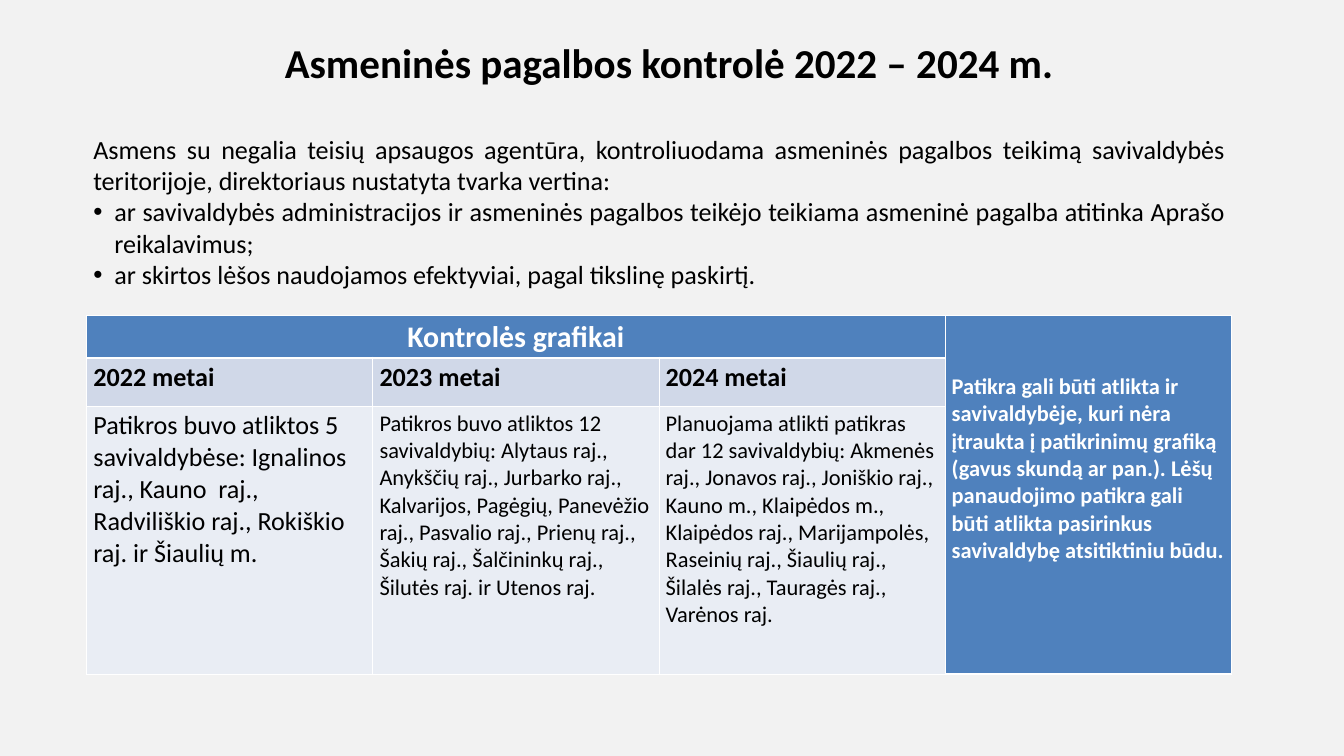
from dataclasses import dataclass

import pptx
import pptx.dml.color
import pptx.enum.text
import pptx.oxml
import pptx.oxml.ns
import pptx.util

Pt = pptx.util.Pt
ALIGN = pptx.enum.text.PP_ALIGN
ANCHOR = pptx.enum.text.MSO_ANCHOR
FONT = "Calibri"
COLORS = {"page": "F2F2F2", "black": "000000", "white": "FFFFFF",
          "blue": "4F81BD", "band": "D0D8E8", "pale": "E9EDF4"}
LEFT, WIDTH = 92.9, 1226.2
INDENT = 22.5
ROWS = (45, 52, 287)


@dataclass
class Entry:
    """Text of one table cell; rows and cols give its span."""
    row: int
    col: int
    text: str
    size: float
    ink: str = "black"
    bold: bool = False
    align: ALIGN = ALIGN.LEFT
    rows: int = 1
    cols: int = 1
    top: float = 3.6


ENTRIES = [
    Entry(0, 0, "Kontrolės grafikai", 32, "white", True, ALIGN.CENTER, cols=3),
    Entry(0, 3, "Patikra gali būti atlikta ir savivaldybėje, kuri nėra įtraukta "
          "į patikrinimų grafiką (gavus skundą ar pan.). Lėšų panaudojimo patikra "
          "gali būti atlikta pasirinkus savivaldybę atsitiktiniu būdu.",
          24, "white", True, rows=3, top=62),
    *(Entry(1, col, f"{2022 + col} metai", 28, bold=True) for col in range(3)),
    Entry(2, 0, "Patikros buvo atliktos 5 savivaldybėse: Ignalinos raj., "
          "Kauno  raj., Radviliškio raj., Rokiškio raj. ir Šiaulių m.", 28),
    Entry(2, 1, "Patikros buvo atliktos 12 savivaldybių: Alytaus raj., "
          "Anykščių raj., Jurbarko raj., Kalvarijos, Pagėgių, Panevėžio raj., "
          "Pasvalio raj., Prienų raj., Šakių raj., Šalčininkų raj., "
          "Šilutės raj. ir Utenos raj.", 24),
    Entry(2, 2, "Planuojama atlikti patikras dar 12 savivaldybių: Akmenės raj., "
          "Jonavos raj., Joniškio raj., Kauno m., Klaipėdos m., Klaipėdos raj., "
          "Marijampolės, Raseinių raj., Šiaulių raj., Šilalės raj., "
          "Tauragės raj., Varėnos raj.", 24),
]
INTRO = ("Asmens su negalia teisių apsaugos agentūra, kontroliuodama asmeninės "
         "pagalbos teikimą savivaldybės teritorijoje, direktoriaus nustatyta "
         "tvarka vertina:")
POINTS = [
    "ar savivaldybės administracijos ir asmeninės pagalbos teikėjo teikiama "
    "asmeninė pagalba atitinka Aprašo reikalavimus;",
    "ar skirtos lėšos naudojamos efektyviai, pagal tikslinę paskirtį.",
]


def shade(name: str) -> pptx.dml.color.RGBColor:
    return pptx.dml.color.RGBColor.from_string(COLORS[name])


def paint(fill, name: str) -> None:
    fill.solid()
    fill.fore_color.rgb = shade(name)


def write(para, text: str, *, size: float, ink: str = "black", bold: bool = False,
          align: ALIGN = ALIGN.LEFT, bullet: bool = False) -> None:
    para.alignment = align
    run = para.add_run()
    run.text = text
    run.font.name, run.font.size, run.font.bold = FONT, Pt(size), bold
    run.font.color.rgb = shade(ink)
    if bullet:
        props = para._p.get_or_add_pPr()
        props.set("marL", str(Pt(INDENT)))
        props.set("indent", str(-Pt(INDENT)))
        for tag, key, value in (("buFont", "typeface", "Arial"), ("buChar", "char", "•")):
            mark = pptx.oxml.parse_xml(
                f'<a:{tag} {pptx.oxml.ns.nsdecls("a")} {key}="{value}"/>')
            props.append(mark)


def add_box(slide, left: float, top: float, width: float, height: float):
    box = slide.shapes.add_textbox(Pt(left), Pt(top), Pt(width), Pt(height))
    box.text_frame.word_wrap = True
    return box.text_frame


def edge(cell, base: float) -> None:
    """Draw white cell borders: 1 pt, with the bottom one base points wide."""
    props = cell._tc.get_or_add_tcPr()
    for side, width in zip("LRTB", (1, 1, 1, base)):
        props.append(pptx.oxml.parse_xml(
            f'<a:ln{side} {pptx.oxml.ns.nsdecls("a")} w="{Pt(width)}"><a:solidFill>'
            f'<a:srgbClr val="{COLORS["white"]}"/></a:solidFill></a:ln{side}>'))


def add_grid(slide) -> None:
    grid = slide.shapes.add_table(len(ROWS), 4, Pt(LEFT), Pt(337.8),
                                  Pt(WIDTH), Pt(sum(ROWS))).table
    for row, height in enumerate(ROWS):
        grid.rows[row].height = Pt(height)
        for col in range(4):
            cell = grid.cell(row, col)
            head = row == 0 or col == 3
            edge(cell, 3 if head else 1)
            paint(cell.fill, "blue" if head else ("band", "pale")[row - 1])
    for item in ENTRIES:
        cell = grid.cell(item.row, item.col)
        if item.rows * item.cols > 1:
            cell.merge(grid.cell(item.row + item.rows - 1, item.col + item.cols - 1))
        cell.margin_top = Pt(item.top)
        write(cell.text_frame.paragraphs[0], item.text, size=item.size,
              ink=item.ink, bold=item.bold, align=item.align)


def main() -> None:
    deck = pptx.Presentation()
    deck.slide_width, deck.slide_height = Pt(1440), Pt(810)
    slide = deck.slides.add_slide(deck.slide_layouts[6])
    paint(slide.background.fill, "page")

    title = add_box(slide, 36, 21.6, 1363, 90)
    title.vertical_anchor = ANCHOR.MIDDLE
    write(title.paragraphs[0], "Asmeninės pagalbos kontrolė 2022 – 2024 m.",
          size=44, bold=True, align=ALIGN.CENTER)

    body = add_box(slide, LEFT, 139, WIDTH, 198.7)
    write(body.paragraphs[0], INTRO, size=28, align=ALIGN.JUSTIFY)
    for point in POINTS:
        write(body.add_paragraph(), point, size=28, align=ALIGN.JUSTIFY, bullet=True)

    add_grid(slide)
    deck.save("out.pptx")


if __name__ == "__main__":
    main()
